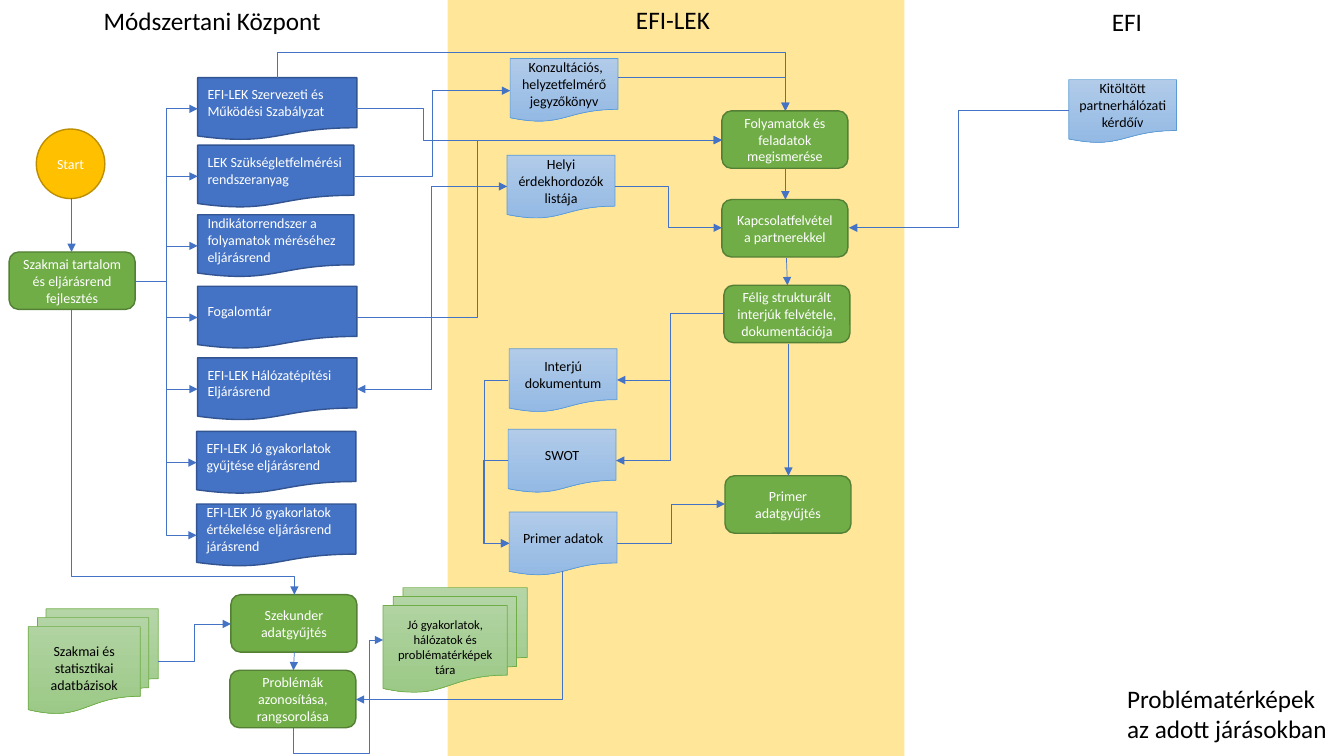
"""Draws the process flow between the methodology centre, EFI-LEK and EFI."""
from typing import NamedTuple

from lxml import etree
from pptx import Presentation
from pptx.dml.color import RGBColor
from pptx.enum.shapes import MSO_CONNECTOR as CXN, MSO_SHAPE as SHP
from pptx.enum.text import MSO_ANCHOR as ANC, PP_ALIGN as AL
from pptx.oxml.ns import qn
from pptx.slide import Slide
from pptx.text.text import TextFrame
from pptx.util import Inches, Pt

BLACK = RGBColor(0x00, 0x00, 0x00)
WHITE = RGBColor(0xFF, 0xFF, 0xFF)
BAND = RGBColor(0xFF, 0xE6, 0x99)
BLUE = RGBColor(0x44, 0x72, 0xC4)
NAVY = RGBColor(0x32, 0x54, 0x91)
GREEN = RGBColor(0x70, 0xAD, 0x47)
DARK_GREEN = RGBColor(0x53, 0x80, 0x35)
GOLD = RGBColor(0xFF, 0xC0, 0x00)
DARK_GOLD = RGBColor(0xBD, 0x8E, 0x00)
SKY = RGBColor(0x5B, 0x9B, 0xD5)
SKY_TOP = RGBColor(0xB1, 0xCB, 0xE9)
SKY_END = RGBColor(0x93, 0xB9, 0xE4)
LEAF_TOP = RGBColor(0xB5, 0xD5, 0xA7)
LEAF_END = RGBColor(0x9C, 0xC9, 0x87)

Point = tuple[float, float]


class Style(NamedTuple):
    shape: SHP
    fills: tuple[RGBColor, ...]
    line: RGBColor
    weight: float
    color: RGBColor
    align: AL = AL.CENTER


class Node(NamedTuple):
    style: Style
    x: float
    y: float
    w: float
    h: float
    text: str
    size: float = 10


class Title(NamedTuple):
    x: float
    y: float
    w: float
    h: float
    text: str
    wrap: bool = False


class Link(NamedTuple):
    points: tuple[Point, ...]
    both: bool = False


START = Style(SHP.FLOWCHART_CONNECTOR, (GOLD,), DARK_GOLD, 1, WHITE)
STEP = Style(SHP.ROUNDED_RECTANGLE, (GREEN,), DARK_GREEN, 1, WHITE)
RULE = Style(SHP.FLOWCHART_DOCUMENT, (BLUE,), NAVY, 1, WHITE, AL.LEFT)
RECORD = Style(SHP.FLOWCHART_DOCUMENT, (SKY_TOP, SKY_END), SKY, 0.5, BLACK)
STORE = Style(SHP.FLOWCHART_MULTIDOCUMENT, (LEAF_TOP, LEAF_END), GREEN, 0.5, BLACK)

TITLES = [
    Title(0.93, 0, 2.38, 0.4, "Módszertani Központ"),
    Title(6.21, -0.01, 0.94, 0.4, "EFI-LEK"),
    Title(10.93, 0.01, 0.5, 0.4, "EFI"),
    Title(11.08, 6.73, 2.19, 0.71, "Problématérképek az adott járásokban", True),
]

RULES = [
    (1.96, 0.77, 1.58, "EFI-LEK Szervezeti és Működési Szabályzat"),
    (1.96, 1.44, 1.55, "LEK Szükségletfelmérési rendszeranyag"),
    (1.96, 2.13, 1.55, "Indikátorrendszer a folyamatok méréséhez eljárásrend"),
    (1.96, 2.84, 1.58, "Fogalomtár"),
    (1.96, 3.55, 1.58, "EFI-LEK Hálózatépítési Eljárásrend"),
    (1.95, 4.28, 1.58, "EFI-LEK Jó gyakorlatok gyűjtése eljárásrend"),
    (1.95, 5, 1.58, "EFI-LEK Jó gyakorlatok értékelése eljárásrend\njárásrend"),
]
STEPS = [
    (0.09, 2.5, "Szakmai tartalom és eljárásrend fejlesztés"),
    (7.16, 1.1, "Folyamatok és feladatok megismerése"),
    (7.16, 1.98, "Kapcsolatfelvétel a partnerekkel"),
    (7.18, 2.83, "Félig strukturált interjúk felvétele, dokumentációja"),
    (7.19, 4.72, "Primer adatgyűjtés"),
    (2.29, 5.9, "Szekunder adatgyűjtés"),
    (2.28, 6.65, "Problémák azonosítása, rangsorolása"),
]
RECORDS = [
    (5.06, 0.58, " Konzultációs, helyzetfelmérő jegyzőkönyv"),
    (5.03, 1.54, "Helyi érdekhordozók listája"),
    (5.05, 3.46, "Interjú dokumentum"),
    (5.04, 4.26, "SWOT"),
    (5.05, 5.08, "Primer adatok"),
    (10.6, 0.79, "Kitöltött partnerhálózati kérdőív"),
]
NODES = [
    Node(START, 0.36, 1.28, 0.68, 0.69, "Start"),
    *(Node(RULE, x, y, w, 0.62, text) for x, y, w, text in RULES),
    *(Node(STEP, x, y, 1.25, 0.57, text) for x, y, text in STEPS),
    *(Node(RECORD, x, y, 1.07, 0.63, text) for x, y, text in RECORDS),
    Node(STORE, 3.8, 5.83, 1.43, 1.04, "Jó gyakorlatok, hálózatok és problématérképek tára", 9),
    Node(STORE, 0.28, 6.04, 1.29, 1.04, "Szakmai és statisztikai adatbázisok"),
]

LINKS = [
    *(Link(((1.34, 2.79), (1.65, 2.79), (1.65, y + 0.31), (x, y + 0.31))) for x, y, _, _ in RULES),
    Link(((0.71, 1.96), (0.71, 2.5))),
    Link(((3.52, 1.75), (4.29, 1.75), (4.29, 0.9), (5.06, 0.9))),
    Link(((3.54, 3.86), (4.28, 3.86), (4.28, 1.85), (5.03, 1.85)), both=True),
    Link(((2.75, 0.77), (2.75, 0.52), (7.79, 0.52), (7.79, 1.1))),
    Link(((3.53, 1.08), (4.2, 1.08), (4.2, 1.39), (7.16, 1.39))),
    Link(((6.13, 0.77), (7.79, 0.77), (7.79, 1.1))),
    Link(((10.6, 1.1), (9.51, 1.1), (9.51, 2.26), (8.42, 2.26))),
    Link(((7.79, 1.67), (7.79, 1.98))),
    Link(((7.8, 2.56), (7.81, 2.83))),
    Link(((3.54, 3.15), (4.73, 3.15), (4.73, 1.39), (7.16, 1.39))),
    Link(((6.1, 1.85), (6.63, 1.85), (6.63, 2.26), (7.16, 2.26))),
    Link(((7.18, 3.11), (6.65, 3.11), (6.65, 3.77), (6.12, 3.77))),
    Link(((7.18, 3.11), (6.65, 3.11), (6.65, 4.57), (6.11, 4.57))),
    Link(((0.71, 3.08), (0.71, 5.72), (2.92, 5.72), (2.92, 5.9))),
    Link(((1.57, 6.56), (1.93, 6.56), (1.93, 6.19), (2.29, 6.19))),
    Link(((2.92, 6.47), (2.91, 6.65))),
    Link(((7.82, 3.41), (7.82, 4.72))),
    Link(((6.12, 5.39), (6.66, 5.39), (6.66, 5), (7.19, 5))),
    Link(((5.04, 3.77), (4.8, 3.77), (4.8, 5.39), (5.05, 5.39))),
    Link(((5.04, 4.57), (4.79, 4.57), (4.79, 5.39), (5.05, 5.39))),
    Link(((5.58, 5.66), (5.58, 6.94), (3.53, 6.94))),
    Link(((2.91, 7.22), (2.91, 7.47), (3.66, 7.47), (3.66, 6.35), (3.8, 6.35))),
]


def write(tf: TextFrame, text: str, size: float, color: RGBColor, align: AL) -> None:
    tf.text = text
    for p in tf.paragraphs:
        p.alignment = align
        for r in p.runs:
            r.font.name, r.font.size, r.font.color.rgb = "Calibri", Pt(size), color


def add_band(s: Slide) -> None:
    sp = s.shapes.add_shape(SHP.RECTANGLE, Inches(4.44), 0, Inches(4.53), Inches(7.5))
    sp.shadow.inherit = False
    sp.fill.solid()
    sp.fill.fore_color.rgb = BAND
    sp.line.fill.background()


def add_title(s: Slide, t: Title) -> None:
    tf = s.shapes.add_textbox(*map(Inches, (t.x, t.y, t.w, t.h))).text_frame
    tf.word_wrap = t.wrap
    write(tf, t.text, 18, BLACK, AL.LEFT)


def add_node(s: Slide, n: Node) -> None:
    st = n.style
    sp = s.shapes.add_shape(st.shape, *map(Inches, (n.x, n.y, n.w, n.h)))
    sp.shadow.inherit = False
    if len(st.fills) == 1:
        sp.fill.solid()
        sp.fill.fore_color.rgb = st.fills[0]
    else:
        sp.fill.gradient()
        sp.fill.gradient_angle = 270
        for stop, color in zip(sp.fill.gradient_stops, st.fills):
            stop.color.rgb = color
    sp.line.color.rgb, sp.line.width = st.line, Pt(st.weight)
    sp.text_frame.vertical_anchor = ANC.MIDDLE
    write(sp.text_frame, n.text, n.size, st.color, st.align)


def add_link(s: Slide, link: Link) -> None:
    (x1, y1), *bends, (x2, y2) = link.points
    dx, dy = x2 - x1, y2 - y1
    cx, cy = (x1 + x2) / 2, (y1 + y2) / 2
    upright = bool(bends) and bends[0][0] == x1
    ends = (cx - dy / 2, cy + dx / 2, cx + dy / 2, cy - dx / 2) if upright else (x1, y1, x2, y2)
    kind = CXN.ELBOW if bends else CXN.STRAIGHT
    c = s.shapes.add_connector(kind, *map(Inches, ends))
    c.line.color.rgb, c.line.width = BLUE, Pt(0.5)
    pr = c._element.spPr
    if upright:
        pr.find(qn("a:xfrm")).set("rot", str(90 * 60000))
    if bends:
        geom = pr.find(qn("a:prstGeom"))
        geom.set("prst", f"bentConnector{len(bends) + 1}")
        guides = geom.find(qn("a:avLst"))
        for i, (bx, by) in enumerate(bends[:-1], 1):
            ratio = (by - y1) / dy if upright == (i == 1) else (bx - x1) / dx
            etree.SubElement(guides, qn("a:gd"), name=f"adj{i}", fmla=f"val {round(ratio * 100000)}")
    for tag in ("a:headEnd", "a:tailEnd") if link.both else ("a:tailEnd",):
        etree.SubElement(pr.find(qn("a:ln")), qn(tag), type="triangle")
    etree.SubElement(pr, qn("a:effectLst"))


def main() -> None:
    prs = Presentation()
    prs.slide_width, prs.slide_height = Inches(13.33), Inches(7.5)
    s = prs.slides.add_slide(prs.slide_layouts[6])
    add_band(s)
    for items, draw in ((TITLES, add_title), (NODES, add_node), (LINKS, add_link)):
        for item in items:
            draw(s, item)


    prs.save("out.pptx")


if __name__ == "__main__":
    main()
